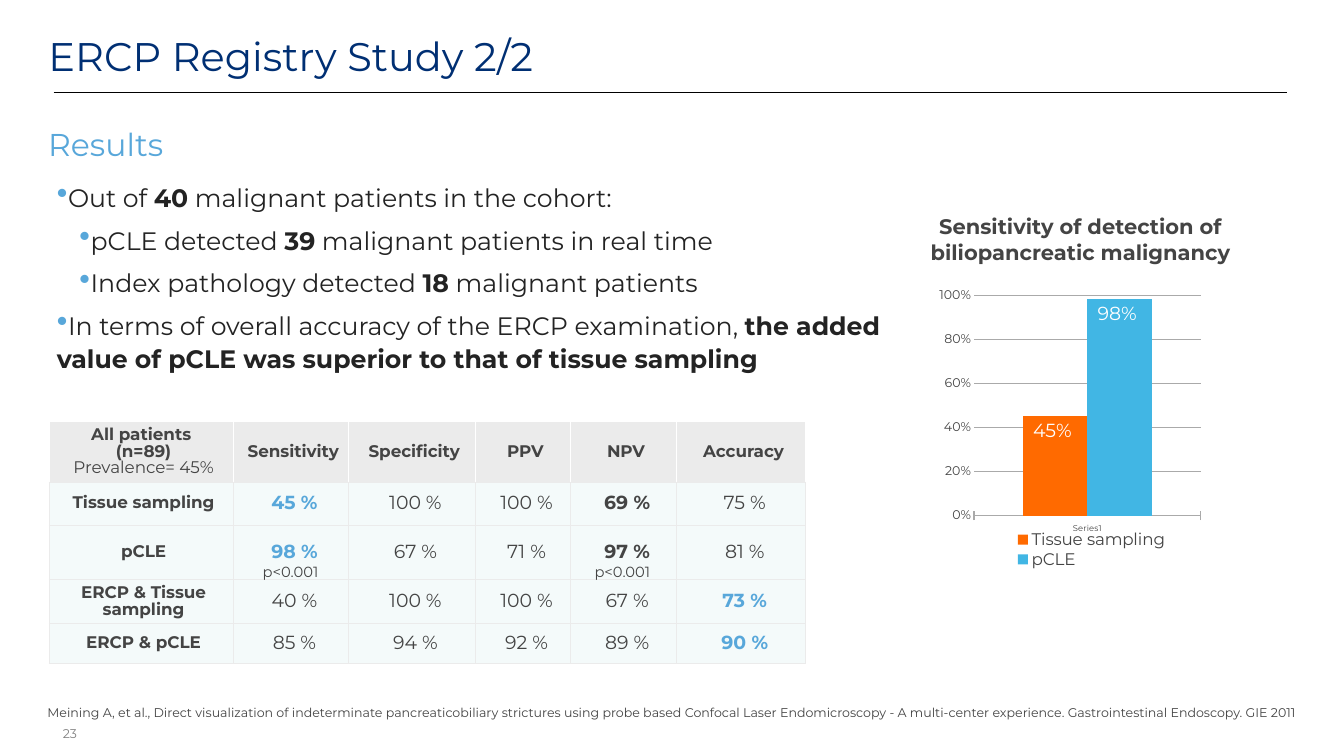
from dataclasses import dataclass

from lxml import etree
from pptx import Presentation
from pptx.chart.data import CategoryChartData
from pptx.dml.color import RGBColor
from pptx.enum.chart import (XL_CHART_TYPE, XL_LABEL_POSITION, XL_LEGEND_POSITION,
                             XL_TICK_LABEL_POSITION, XL_TICK_MARK)
from pptx.enum.shapes import MSO_CONNECTOR
from pptx.enum.text import MSO_ANCHOR, PP_ALIGN
from pptx.oxml import parse_xml
from pptx.oxml.ns import nsdecls, qn
from pptx.util import Cm, Pt

LEFT, CENTER, RIGHT = PP_ALIGN.LEFT, PP_ALIGN.CENTER, PP_ALIGN.RIGHT
TOP, MIDDLE = MSO_ANCHOR.TOP, MSO_ANCHOR.MIDDLE
COLUMNS = XL_CHART_TYPE.COLUMN_CLUSTERED
INSIDE_END = XL_LABEL_POSITION.INSIDE_END
LEGEND_BOTTOM = XL_LEGEND_POSITION.BOTTOM
LABELS_LOW = XL_TICK_LABEL_POSITION.LOW
TICK_CROSS, TICK_IN = XL_TICK_MARK.CROSS, XL_TICK_MARK.INSIDE


@dataclass(frozen=True)
class Theme:
    font: str = "Montserrat"
    navy: str = "002F73"
    blue: str = "58A7DA"
    ink: str = "232323"
    text: str = "444444"
    muted: str = "818181"
    black: str = "000000"
    white: str = "FFFFFF"
    grid: str = "AAAAAA"
    header: str = "EBEBEB"
    body: str = "F4FAFA"
    tissue: str = "FF6A00"
    pcle: str = "41B6E4"
    title_size: int = 38
    heading_size: int = 30
    bullet_size: int = 24
    chart_title_size: int = 20
    value_size: int = 18
    label_size: int = 16
    note_size: int = 14
    small_size: int = 12
    category_size: int = 8


THEME = Theme()

# (level, runs), where each run is (text, bold)
FINDINGS = [
    (0, [("Out of ", False), ("40", True), (" malignant patients in the cohort:", False)]),
    (1, [("pCLE detected ", False), ("39", True), (" malignant patients in real time", False)]),
    (1, [("Index pathology detected ", False), ("18", True), (" malignant patients", False)]),
    (0, [("In terms of overall accuracy of the ERCP examination, ", False),
         ("the added value of pCLE was superior to that of tissue sampling", True)]),
]
MEASURES = ["Sensitivity", "Specificity", "PPV", "NPV", "Accuracy"]
RESULTS = [
    ("Tissue sampling", [45, 100, 100, 69, 75]),
    ("pCLE", [98, 67, 71, 97, 81]),
    ("ERCP & Tissue sampling", [40, 100, 100, 67, 73]),
    ("ERCP & pCLE", [85, 94, 92, 89, 90]),
]
BLUE_CELLS = {(1, 1), (2, 1), (3, 5), (4, 5)}
BOLD_CELLS = BLUE_CELLS | {(1, 4), (2, 4)}
COLUMN_WIDTHS = [6.2, 3.86, 4.27, 3.2, 3.56, 4.34]
ROW_HEIGHTS = [2.03, 1.45, 1.83, 1.47, 1.35]
CITATION = ("Meining A, et al., Direct visualization of indeterminate pancreaticobiliary "
            "strictures using probe based Confocal Laser Endomicroscopy - A multi-center "
            "experience. Gastrointestinal Endoscopy. GIE 2011")


def rgb(color):
    return RGBColor.from_string(color)


def style_font(font, size, color, bold=False):
    font.name, font.size, font.bold = THEME.font, Pt(size), bold
    font.color.rgb = rgb(color)


def add_run(paragraph, text, size, color, bold=False):
    run = paragraph.add_run()
    run.text = text
    style_font(run.font, size, color, bold)


def add_frame(slide, left, top, width, height, anchor=TOP, margin=0.1, wrap=True):
    frame = slide.shapes.add_textbox(Cm(left), Cm(top), Cm(width), Cm(height)).text_frame
    frame.word_wrap, frame.vertical_anchor = wrap, anchor
    frame.margin_left = frame.margin_right = Cm(margin)
    frame.margin_top = frame.margin_bottom = Cm(margin)
    return frame


def add_label(slide, place, text, size, color, align=LEFT, bold=False, **options):
    paragraph = add_frame(slide, *place, **options).paragraphs[0]
    paragraph.alignment = align
    add_run(paragraph, text, size, color, bold)


def add_rule(slide, left, right, y):
    rule = slide.shapes.add_connector(MSO_CONNECTOR.STRAIGHT, Cm(left), Cm(y), Cm(right), Cm(y))
    rule.line.color.rgb = rgb(THEME.black)
    rule.line.width = Pt(0.25)
    etree.SubElement(rule.element.spPr, qn("a:effectLst"))


def add_bullet(paragraph, level):
    properties = paragraph._p.get_or_add_pPr()
    properties.set("marL", str(Cm(0.84 if level else 0.08)))
    properties.set("indent", "0")
    for xml in (f'<a:buClr {nsdecls("a")}><a:srgbClr val="{THEME.blue}"/></a:buClr>',
                f'<a:buSzPct {nsdecls("a")} val="125000"/>',
                f'<a:buChar {nsdecls("a")} char="•"/>'):
        properties.append(parse_xml(xml))
    paragraph.level = level


def add_findings(slide):
    frame = add_frame(slide, 1.73, 5.92, 28.42, 6.53)
    for index, (level, runs) in enumerate(FINDINGS):
        paragraph = frame.add_paragraph() if index else frame.paragraphs[0]
        add_bullet(paragraph, level)
        paragraph.line_spacing = 1.1
        if index:
            paragraph.space_before = Pt(9)
        for text, bold in runs:
            add_run(paragraph, text, THEME.bullet_size, THEME.ink, bold)


def set_borders(cell, side_color, bottom_color):
    properties = cell._tc.get_or_add_tcPr()
    colors = {"lnL": side_color, "lnR": side_color, "lnT": side_color, "lnB": bottom_color}
    for position, (tag, color) in enumerate(colors.items()):
        properties.insert(position, parse_xml(
            f'<a:{tag} {nsdecls("a")} w="{Pt(1)}"><a:solidFill>'
            f'<a:srgbClr val="{color}"/></a:solidFill></a:{tag}>'))


def prepare_cell(cell, is_header):
    cell.fill.solid()
    cell.fill.fore_color.rgb = rgb(THEME.header if is_header else THEME.body)
    cell.vertical_anchor = MIDDLE
    cell.margin_left = cell.margin_right = cell.margin_top = cell.margin_bottom = Cm(0.1)
    set_borders(cell, THEME.white if is_header else THEME.header, THEME.header)


def prepare_paragraph(paragraph, indent=0.15):
    paragraph.alignment, paragraph.line_spacing = CENTER, 0.83
    properties = paragraph._p.get_or_add_pPr()
    properties.set("marL", str(Cm(indent)))
    properties.set("indent", "0")
    return paragraph


def add_results_table(slide):
    table = slide.shapes.add_table(len(ROW_HEIGHTS), len(COLUMN_WIDTHS), Cm(1.65), Cm(14.17),
                                   Cm(sum(COLUMN_WIDTHS)), Cm(sum(ROW_HEIGHTS))).table
    table.horz_banding = False
    for column, width in zip(table.columns, COLUMN_WIDTHS):
        column.width = Cm(width)
    for row, height in zip(table.rows, ROW_HEIGHTS):
        row.height = Cm(height)

    # Header and row labels
    labels = {(0, c): name for c, name in enumerate(MEASURES, 1)}
    labels.update({(r, 0): name for r, (name, _) in enumerate(RESULTS, 1)})
    for (r, c), name in labels.items():
        prepare_cell(table.cell(r, c), r == 0)
        paragraph = prepare_paragraph(table.cell(r, c).text_frame.paragraphs[0])
        add_run(paragraph, name, THEME.label_size, THEME.text, True)

    # Corner with the cohort
    corner = table.cell(0, 0)
    prepare_cell(corner, True)
    cohort = prepare_paragraph(corner.text_frame.paragraphs[0])
    add_run(cohort, "All patients ", THEME.label_size, THEME.text, True)
    cohort.add_line_break()
    add_run(cohort, "(n=89)", THEME.label_size, THEME.text, True)
    prevalence = prepare_paragraph(corner.text_frame.add_paragraph())
    add_run(prevalence, "Prevalence= 45%", THEME.label_size, THEME.text)

    # Percentages
    for r, (_, values) in enumerate(RESULTS, 1):
        for c, value in enumerate(values, 1):
            prepare_cell(table.cell(r, c), False)
            paragraph = prepare_paragraph(table.cell(r, c).text_frame.paragraphs[0], 0.23)
            color = THEME.blue if (r, c) in BLUE_CELLS else THEME.text
            add_run(paragraph, f"{value} %", THEME.value_size, color, (r, c) in BOLD_CELLS)


def set_layout(element, x, y, width, height, inner=False):
    target = '<c:layoutTarget val="inner"/>' if inner else ""
    sizes = "".join(f'<c:{tag} val="{value}"/>' for tag, value in
                    zip("xywh", (x, y, width, height)))
    for old in element.findall(qn("c:layout")):
        element.remove(old)
    layout = parse_xml(f'<c:layout {nsdecls("c")}><c:manualLayout>{target}<c:xMode val="edge"/>'
                       f'<c:yMode val="edge"/>{sizes}</c:manualLayout></c:layout>')
    element.insert(0 if inner else 1, layout)


def add_sensitivity_chart(slide):
    data = CategoryChartData()
    data.categories = ["Series1"]
    data.add_series("Tissue sampling", [0.45])
    data.add_series("pCLE", [0.98])
    chart = slide.shapes.add_chart(COLUMNS, Cm(30.94), Cm(9.63), Cm(9.42), Cm(9.5), data).chart
    chart.has_title = False
    style_font(chart.font, 10, THEME.black)

    # Columns
    plot = chart.plots[0]
    plot.gap_width, plot.overlap, plot.vary_by_categories = 150, 0, False
    for series, color in zip(plot.series, (THEME.tissue, THEME.pcle)):
        series.format.fill.solid()
        series.format.fill.fore_color.rgb = rgb(color)
        labels = series.data_labels
        labels.show_value, labels.position = True, INSIDE_END
        labels.number_format, labels.number_format_is_linked = r"#,##0%_);\(#,##0%\)", False
        style_font(labels.font, THEME.value_size, THEME.white)

    # Axes
    category, value = chart.category_axis, chart.value_axis
    category.tick_label_position, category.major_tick_mark = LABELS_LOW, TICK_CROSS
    style_font(category.tick_labels.font, THEME.category_size, THEME.text)
    value.minimum_scale, value.maximum_scale, value.major_unit = 0, 1, 0.2
    value.major_tick_mark = TICK_IN
    value.tick_labels.number_format, value.tick_labels.number_format_is_linked = "0%", False
    style_font(value.tick_labels.font, THEME.small_size, THEME.text)
    value.format.line.fill.background()
    for line in (category.format.line, value.major_gridlines.format.line):
        line.color.rgb, line.width = rgb(THEME.grid), Pt(1)

    # Legend and plot placement
    chart.has_legend = True
    chart.legend.position, chart.legend.include_in_layout = LEGEND_BOTTOM, True
    style_font(chart.legend.font, THEME.label_size, THEME.text)
    set_layout(chart.legend._element, 0.33, 0.86, 0.56, 0.14)
    set_layout(chart._chartSpace.chart.plotArea, 0.19, 0.03, 0.81, 0.78, inner=True)


def main():
    deck = Presentation()
    deck.slide_width, deck.slide_height = Cm(45.16), Cm(25.4)
    slide = deck.slides.add_slide(deck.slide_layouts[6])
    text = THEME.text

    # Heading
    add_label(slide, (1.63, 0.61, 41.35, 2.51), "ERCP Registry Study 2/2", THEME.title_size,
              THEME.navy, anchor=MIDDLE, margin=0)
    add_rule(slide, 1.8, 43.26, 3.1)

    # Results
    add_label(slide, (1.52, 4.11, 4.09, 1.27), "Results", THEME.heading_size, THEME.blue,
              wrap=False)
    add_findings(slide)
    add_results_table(slide)
    for left in (8.66, 19.81):
        add_label(slide, (left, 18.86, 2.21, 0.71), "p<0.001", THEME.note_size, text, CENTER,
                  anchor=MIDDLE, wrap=False)

    # Sensitivity comparison
    add_label(slide, (29.41, 7.09, 13.79, 2.01),
              "Sensitivity of detection of biliopancreatic malignancy",
              THEME.chart_title_size, text, CENTER, bold=True)
    add_sensitivity_chart(slide)

    # Footer
    add_label(slide, (-0.03, 23.57, 45.24, 0.64), CITATION, THEME.small_size, text, CENTER)
    add_label(slide, (1.93, 24.31, 0.76, 0.64), "23", THEME.small_size, THEME.muted, RIGHT,
              anchor=MIDDLE, wrap=False)
    deck.save("out.pptx")


if __name__ == "__main__":
    main()
